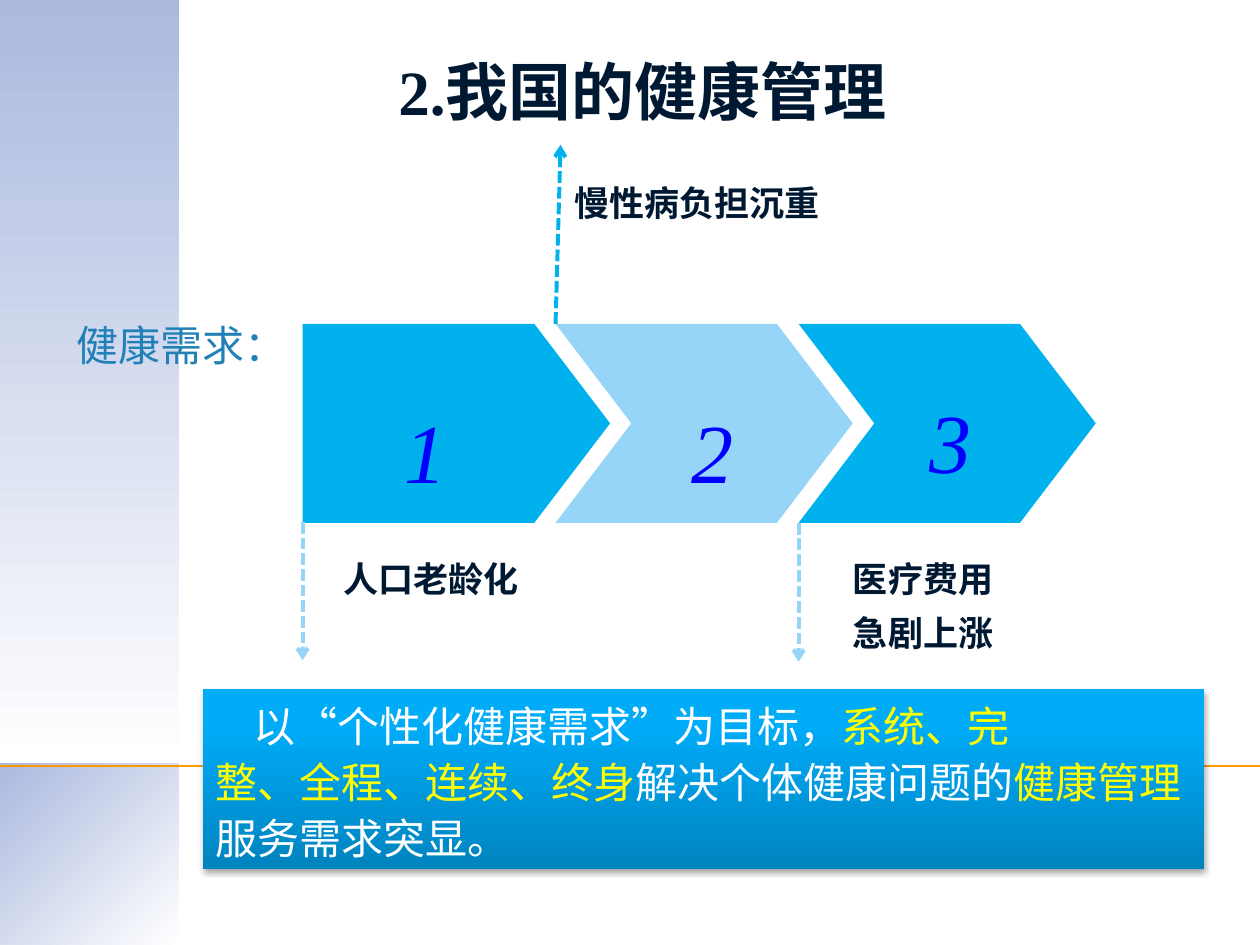
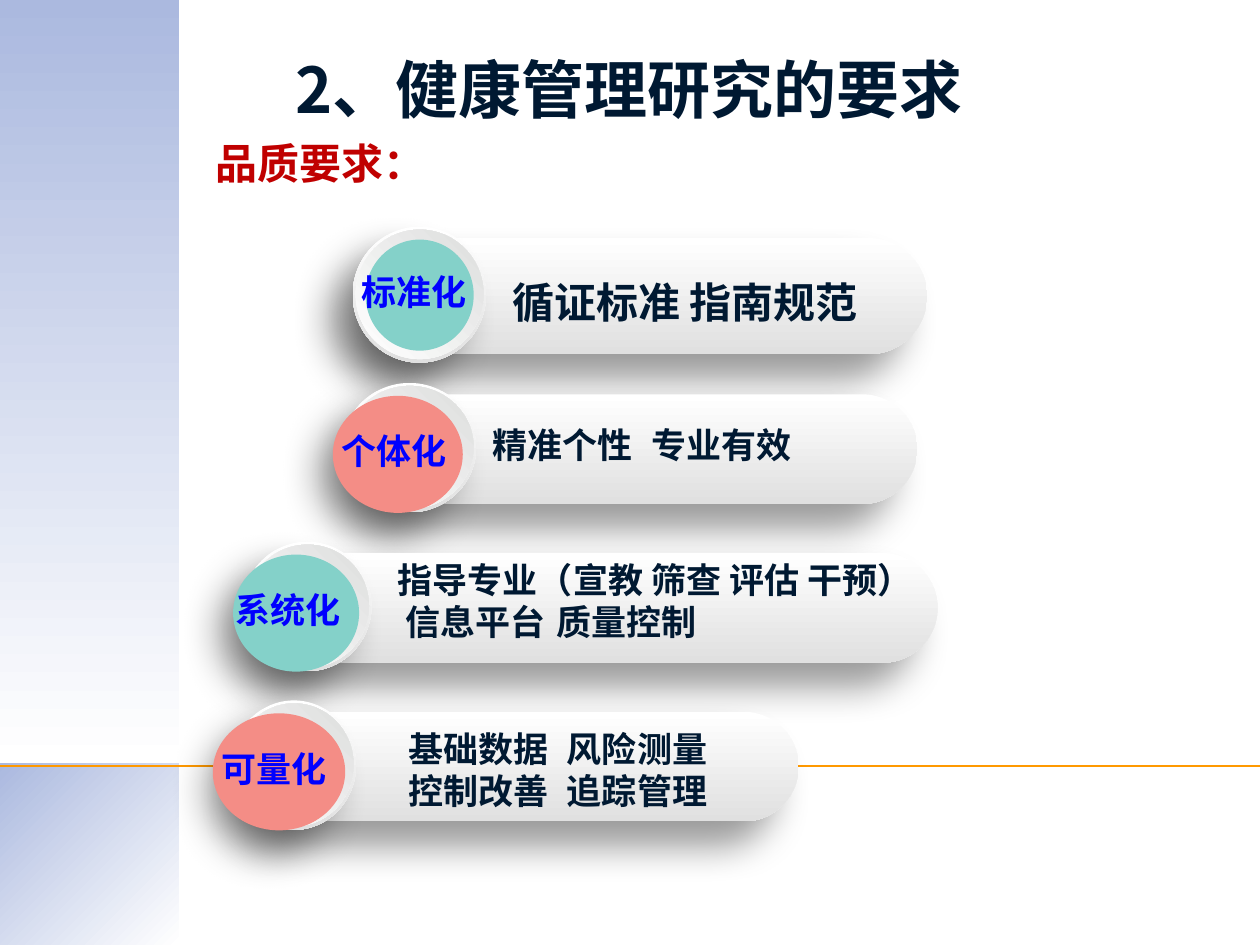
from dataclasses import dataclass

from lxml import etree
from pptx import Presentation
from pptx.dml.color import RGBColor
from pptx.enum.dml import MSO_LINE
from pptx.enum.shapes import MSO_CONNECTOR, MSO_SHAPE
from pptx.enum.text import MSO_ANCHOR, PP_ALIGN
from pptx.oxml.ns import qn
from pptx.util import Cm, Pt

RECT, PILL, OVAL = MSO_SHAPE.RECTANGLE, MSO_SHAPE.ROUNDED_RECTANGLE, MSO_SHAPE.OVAL
PENTAGON, CHEVRON = MSO_SHAPE.PENTAGON, MSO_SHAPE.CHEVRON
STRAIGHT, DASH = MSO_CONNECTOR.STRAIGHT, MSO_LINE.SQUARE_DOT
LEFT, CENTER = PP_ALIGN.LEFT, PP_ALIGN.CENTER
TOP, MIDDLE = MSO_ANCHOR.TOP, MSO_ANCHOR.MIDDLE
TITLE_ONLY = 5


@dataclass(frozen=True)
class Theme:
    cjk: str = "Noto Sans CJK SC"
    serif: str = "Times New Roman"
    sans: str = "Roboto"
    ink: str = "001932"
    blue: str = "0000FF"
    caption: str = "2181B7"
    red: str = "C00000"
    white: str = "FFFFFF"
    yellow: str = "FFFF00"
    rule: str = "FF9900"
    cyan: str = "01B1ED"
    sky: str = "96D5F7"
    teal: str = "84D1C9"
    coral: str = "F48D86"
    band: tuple = ("ABB9DF", "FFFFFF")
    summary: tuple = ("0084BF", "00ABF8")
    bar: tuple = ("FFFFFF", "E0E0E0")
    ring: tuple = ("FFFFFF", "DDDEDD")
    title_size: int = 36
    number_size: int = 48
    lead_size: int = 24
    label_size: int = 20
    # colour opacity in percent, blur and distance in points, direction in degrees
    summary_shadow: tuple = (35, 3.1, 1.8, 90)
    bar_shadow: tuple = (40, 22, 20, 135)


T = Theme()

# All boxes are (left, top, width, height) in centimetres.
NEEDS_TITLE = ("2.我国的健康管理", (0.51, 0.94, 24.89, 1.78), T.serif)
NEEDS_CAPTION = ("健康需求：", (1.3, 6.32, 4.98, 1.35))
STEP_TOP, STEP_HEIGHT, STEP_POINT = 6.53, 4.01, 0.381
STEPS = [  # number, outline, left, width, colour, number position
    ("1", PENTAGON, 6.1, 6.2, T.cyan, (7.9, 7.92)),
    ("2", CHEVRON, 11.2, 5.99, T.sky, (13.69, 7.92)),
    ("3", CHEVRON, 16.1, 5.99, T.cyan, (18.49, 7.72)),
]
STEP_LABELS = [
    (["人口老龄化"], (6.65, 10.85, 4.09, 1.24)),
    (["慢性病负担沉重"], (11.28, 3.28, 5.54, 1.24)),
    (["医疗费用", "急剧上涨"], (16.92, 10.85, 3.38, 2.36)),
]
ARROWS = [
    ((6.1, 10.52), (6.1, 13.31), T.sky),
    ((11.2, 6.53), (11.3, 2.92), T.cyan),
    ((16.1, 10.54), (16.1, 13.34), T.sky),
]
SUMMARY_BOX = (4.09, 13.89, 20.19, 3.63)
SUMMARY_INDENT = 0.78
SUMMARY = [
    [("以“个性化健康需求”为目标，", T.white), ("系统、完", T.yellow)],
    [("整、全程、连续、终身", T.yellow), ("解决个体健康问题的", T.white),
     ("健康管理", T.yellow)],
    [("服务需求突显。", T.white)],
]

QUALITY_TITLE = ("2、健康管理研究的要求", (4.09, 0.79, 17.17, 1.96), T.cjk)
QUALITY_CAPTION = ("品质要求：", (4.09, 2.64, 4.75, 1.27))
DETAIL_TAB = 3.2
QUALITIES = [
    dict(tag="标准化", tag_at=(7.04, 5.33), details=["循证标准 指南规范"],
         detail_at=(10.08, 5.44), size=T.lead_size, color=T.teal,
         bar=(7.67, 4.8, 11.02, 2.34), knob=2.69, disc=(7.37, 4.83, 2.18, 2.24)),
    dict(tag="个体化", tag_at=(6.63, 8.53), details=["精准个性\t专业有效"],
         detail_at=(9.68, 8.41), size=T.label_size, color=T.coral,
         bar=(7.47, 7.95, 11.02, 2.21), knob=2.69, disc=(6.71, 7.98, 2.62, 2.36)),
    dict(tag="系统化", tag_at=(4.5, 11.73),
         details=["指导专业（宣教 筛查 评估 干预）", " 信息平台\t质量控制"],
         detail_at=(7.77, 11.13), size=T.label_size, color=T.teal,
         bar=(5.46, 11.15, 13.44, 2.21), knob=2.59, disc=(4.7, 11.18, 2.54, 2.36)),
    dict(tag="可量化", tag_at=(4.22, 14.94),
         details=["基础数据\t风险测量", "控制改善\t追踪管理"],
         detail_at=(7.98, 14.55), size=T.label_size, color=T.coral,
         bar=(5.23, 14.35, 10.87, 2.21), knob=2.51, disc=(4.29, 14.38, 2.67, 2.36)),
]


def cm(values):
    return [Cm(value) for value in values]


def style_run(run, font, size, color, bold=False, italic=False):
    run.font.name = font
    run.font.size = Pt(size)
    run.font.color.rgb = RGBColor.from_string(color)
    run.font.bold = bold
    run.font.italic = italic
    east_asian = etree.SubElement(run.font._element, qn("a:ea"))
    east_asian.set("typeface", T.cjk)


def fill_text(frame, lines, align=LEFT, spacing=None, anchor=TOP, **style):
    frame.text = "\n".join(lines)
    frame.vertical_anchor = anchor
    for paragraph in frame.paragraphs:
        paragraph.alignment = align
        if spacing:
            paragraph.line_spacing = spacing
        for run in paragraph.runs:
            style_run(run, **style)


def add_text(slide, lines, box, wrap=False, **style):
    frame = slide.shapes.add_textbox(*cm(box)).text_frame
    frame.word_wrap = wrap
    fill_text(frame, lines, **style)
    return frame


def add_shadow(shape, opacity, blur, distance, direction):
    effects = shape.element.spPr.find(qn("a:effectLst"))
    shadow = etree.SubElement(
        effects, qn("a:outerShdw"), blurRad=str(Pt(blur)), dist=str(Pt(distance)),
        dir=str(direction * 60000), algn="ctr", rotWithShape="0")
    color = etree.SubElement(shadow, qn("a:srgbClr"), val="000000")
    etree.SubElement(color, qn("a:alpha"), val=str(opacity * 1000))


def add_figure(slide, outline, box, fill, angle=90, last_stop=1.0, adjust=None, shadow=None):
    """Add a borderless shape; fill is one colour or a pair for a gradient (angle clockwise)."""
    shape = slide.shapes.add_shape(outline, *cm(box))
    shape.shadow.inherit = False
    shape.line.fill.background()
    if isinstance(fill, str):
        shape.fill.solid()
        shape.fill.fore_color.rgb = RGBColor.from_string(fill)
    else:
        shape.fill.gradient()
        shape.fill.gradient_angle = 360 - angle
        for stop, color, position in zip(shape.fill.gradient_stops, fill, (0, last_stop)):
            stop.color.rgb = RGBColor.from_string(color)
            stop.position = position
    if adjust is not None:
        shape.adjustments[0] = adjust
    if shadow:
        add_shadow(shape, *shadow)
    return shape


def add_line(slide, start, end, color, width):
    line = slide.shapes.add_connector(STRAIGHT, *cm(start + end))
    line.line.color.rgb = RGBColor.from_string(color)
    line.line.width = Pt(width)
    etree.SubElement(line.element.spPr, qn("a:effectLst"))
    return line


def add_arrow(slide, start, end, color):
    arrow = add_line(slide, start, end, color, 2.25)
    arrow.line.dash_style = DASH
    etree.SubElement(arrow.line._get_or_add_ln(), qn("a:tailEnd"), type="arrow")


def start_slide(prs, text, box, font):
    """Add a slide with the shared side band, rule and title."""
    slide = prs.slides.add_slide(prs.slide_layouts[TITLE_ONLY])
    add_figure(slide, RECT, (0, 0, 3.61, 15.39), T.band)
    add_figure(slide, RECT, (0, 15.39, 3.61, 3.66), T.band, angle=45)
    add_line(slide, (0, 15.44), (25.4, 15.44), T.rule, 0.75)
    title = slide.shapes.title
    title.left, title.top, title.width, title.height = cm(box)
    fill_text(title.text_frame, [text], align=CENTER, anchor=MIDDLE,
              font=font, size=T.title_size, color=T.ink, bold=True)
    return slide


def add_summary(slide):
    box = add_figure(slide, RECT, SUMMARY_BOX, T.summary, angle=270, last_stop=0.8,
                     shadow=T.summary_shadow)
    frame = box.text_frame
    frame.word_wrap = True
    for index, parts in enumerate(SUMMARY):
        paragraph = frame.add_paragraph() if index else frame.paragraphs[0]
        paragraph.alignment = LEFT
        paragraph.line_spacing = Pt(32)
        if index == 0:
            paragraph._p.get_or_add_pPr().set("indent", str(Cm(SUMMARY_INDENT)))
        for text, color in parts:
            run = paragraph.add_run()
            run.text = text
            style_run(run, T.cjk, T.lead_size, color)


def build_needs(prs):
    slide = start_slide(prs, *NEEDS_TITLE)
    for number, outline, left, width, color, number_at in STEPS:
        add_figure(slide, outline, (left, STEP_TOP, width, STEP_HEIGHT), color,
                   adjust=STEP_POINT)
        add_text(slide, [number], number_at + (3.2, 2.31), wrap=True, font=T.serif,
                 size=T.number_size, color=T.blue, italic=True)
    for arrow in ARROWS:
        add_arrow(slide, *arrow)
    for lines, box in STEP_LABELS:
        add_text(slide, lines, box, align=CENTER, spacing=1.3, font=T.sans,
                 size=T.label_size, color=T.ink, bold=True)
    add_summary(slide)
    caption, box = NEEDS_CAPTION
    add_text(slide, [caption], box, wrap=True, font=T.cjk, size=T.lead_size, color=T.caption)


def add_quality(slide, quality):
    left, top, _, height = quality["bar"]
    knob = (left - 0.56, top - 0.23, quality["knob"], height + 0.4)
    ring = (knob[0] + 0.06, knob[1] + 0.06, knob[2] - 0.11, knob[3] - 0.13)
    add_figure(slide, PILL, quality["bar"], T.bar, adjust=0.5, shadow=T.bar_shadow)
    add_figure(slide, OVAL, knob, T.bar, shadow=T.bar_shadow)
    add_figure(slide, OVAL, ring, T.ring, angle=315)
    add_figure(slide, OVAL, quality["disc"], quality["color"])
    add_text(slide, [quality["tag"]], quality["tag_at"] + (2.67, 1.12), font=T.cjk,
             size=T.label_size, color=T.blue, bold=True)
    details = add_text(slide, quality["details"], quality["detail_at"] + (11.4, 1.2),
                       wrap=True, font=T.serif, size=quality["size"], color=T.ink, bold=True)
    for paragraph in details.paragraphs:
        if "\t" in paragraph.text:
            tabs = etree.SubElement(paragraph._p.get_or_add_pPr(), qn("a:tabLst"))
            etree.SubElement(tabs, qn("a:tab"), pos=str(Cm(DETAIL_TAB)), algn="l")


def build_qualities(prs):
    slide = start_slide(prs, *QUALITY_TITLE)
    caption, box = QUALITY_CAPTION
    add_text(slide, [caption], box, font=T.cjk, size=T.lead_size, color=T.red, bold=True)
    for quality in QUALITIES:
        add_quality(slide, quality)


def main():
    prs = Presentation()
    prs.slide_width, prs.slide_height = Cm(25.4), Cm(19.05)
    build_needs(prs)
    build_qualities(prs)
    prs.save("out.pptx")


if __name__ == "__main__":
    main()
